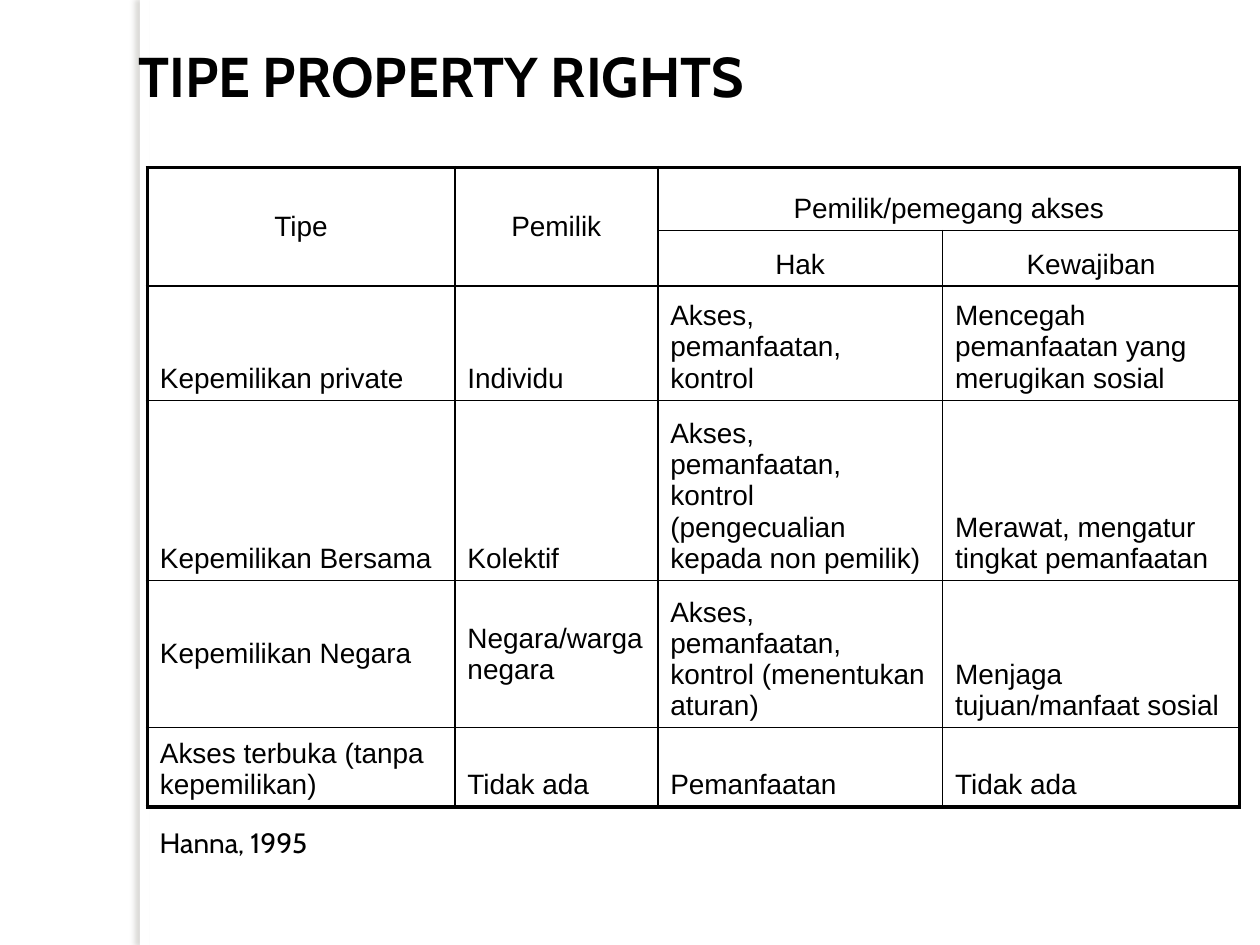
"""Build the property rights slide: a side strip, a title, a table and its source."""
import pptx
import pptx.dml.color
import pptx.enum.shapes
import pptx.enum.text
import pptx.oxml
import pptx.oxml.ns
import pptx.util

Cm, Pt = pptx.util.Cm, pptx.util.Pt
BLACK = pptx.dml.color.RGBColor(0x00, 0x00, 0x00)
WHITE = pptx.dml.color.RGBColor(0xFF, 0xFF, 0xFF)
SHADOW = pptx.dml.color.RGBColor(0x73, 0x6F, 0x63)
ALIGN = pptx.enum.text.PP_ALIGN
ANCHOR = pptx.enum.text.MSO_ANCHOR
NS = pptx.oxml.ns.nsdecls("a")

TEXTS = [
    ("TIPE PROPERTY RIGHTS", (2.54, 0.71, 15.44, 1.63),
     {"size": Pt(32), "name": "Cabin", "bold": True}, ALIGN.JUSTIFY),
    ("Hanna, 1995", (2.97, 16.51, 4.65, 0.94),
     {"size": Pt(16), "name": "Cabin"}, ALIGN.LEFT),
]
ROWS = [
    ("Tipe", "Pemilik", "Pemilik/pemegang akses", ""),
    ("", "", "Hak", "Kewajiban"),
    ("Kepemilikan private", "Individu", "Akses, pemanfaatan, kontrol",
     "Mencegah pemanfaatan yang merugikan sosial"),
    ("Kepemilikan Bersama", "Kolektif",
     "Akses, pemanfaatan, kontrol (pengecualian kepada non pemilik)",
     "Merawat, mengatur tingkat pemanfaatan"),
    ("Kepemilikan Negara", "Negara/warga negara",
     "Akses, pemanfaatan, kontrol (menentukan aturan)",
     "Menjaga tujuan/manfaat sosial"),
    ("Akses terbuka (tanpa kepemilikan)", "Tidak ada", "Pemanfaatan", "Tidak ada"),
]
COL_WIDTHS = [6.2, 4.09, 5.74, 5.99]
ROW_HEIGHTS = [1.27, 1.12, 2.3, 3.63, 2.97, 1.6]
MERGES = [((0, 0), (1, 0)), ((0, 1), (1, 1)), ((0, 2), (0, 3))]
MIDDLE_CELLS = {(0, 0), (0, 1), (4, 0), (4, 1)}
HEADER_ROWS = 2
TABLE_FONT = {"size": Pt(16), "name": "Arial", "bold": False}
OUTER, INNER = Pt(2.25), Pt(1)


def write(tf, text, fmt, align):
    p = tf.paragraphs[0]
    p.alignment = align
    r = p.add_run()
    r.text = text
    for key, value in fmt.items():
        setattr(r.font, key, value)
    r.font.color.rgb = BLACK


def add_strip(s, height):
    sp = s.shapes.add_shape(pptx.enum.shapes.MSO_SHAPE.RECTANGLE,
                            Cm(2.82), 0, Cm(0.2), height)
    sp.fill.solid()
    sp.fill.fore_color.rgb = WHITE
    sp.line.fill.background()
    sp.shadow.inherit = False
    effects = sp.element.spPr.find(pptx.oxml.ns.qn("a:effectLst"))
    effects.append(pptx.oxml.parse_xml(
        f'<a:outerShdw {NS} blurRad="{Pt(3)}" dist="{Pt(3)}" dir="10800000" '
        f'algn="r" rotWithShape="0"><a:srgbClr val="{SHADOW}">'
        '<a:alpha val="25000"/></a:srgbClr></a:outerShdw>'))


def set_borders(cell, row, col):
    height = cell.span_height if cell.is_merge_origin else 1
    width = cell.span_width if cell.is_merge_origin else 1
    on_edge = {"L": col == 0, "R": col + width == len(COL_WIDTHS),
               "T": row == 0, "B": row + height == len(ROWS)}
    tc_pr = cell._tc.get_or_add_tcPr()
    for side, outer in on_edge.items():
        tc_pr.append(pptx.oxml.parse_xml(
            f'<a:ln{side} {NS} w="{OUTER if outer else INNER}"><a:solidFill>'
            f'<a:srgbClr val="{BLACK}"/></a:solidFill></a:ln{side}>'))


def add_rights_table(s):
    table = s.shapes.add_table(len(ROWS), len(COL_WIDTHS), Cm(2.97), Cm(3.38),
                               Cm(sum(COL_WIDTHS)), Cm(sum(ROW_HEIGHTS))).table
    table.first_row = table.horz_banding = False
    for column, width in zip(table.columns, COL_WIDTHS):
        column.width = Cm(width)
    for row, height in zip(table.rows, ROW_HEIGHTS):
        row.height = Cm(height)
    for first, last in MERGES:
        table.cell(*first).merge(table.cell(*last))
    for i, texts in enumerate(ROWS):
        for j, text in enumerate(texts):
            cell = table.cell(i, j)
            set_borders(cell, i, j)
            cell.fill.background()
            cell.vertical_anchor = ANCHOR.MIDDLE if (i, j) in MIDDLE_CELLS else ANCHOR.BOTTOM
            if text:
                write(cell.text_frame, text, TABLE_FONT,
                      ALIGN.CENTER if i < HEADER_ROWS else ALIGN.LEFT)


def main():
    prs = pptx.Presentation()
    prs.slide_width, prs.slide_height = Cm(25.4), Cm(19.05)
    s = prs.slides.add_slide(prs.slide_layouts[6])
    s.background.fill.solid()
    s.background.fill.fore_color.rgb = WHITE
    add_strip(s, prs.slide_height)
    add_rights_table(s)
    for text, box, fmt, align in TEXTS:
        tf = s.shapes.add_textbox(*map(Cm, box)).text_frame
        tf.word_wrap = True
        write(tf, text, fmt, align)
    prs.save("out.pptx")


if __name__ == "__main__":
    main()
